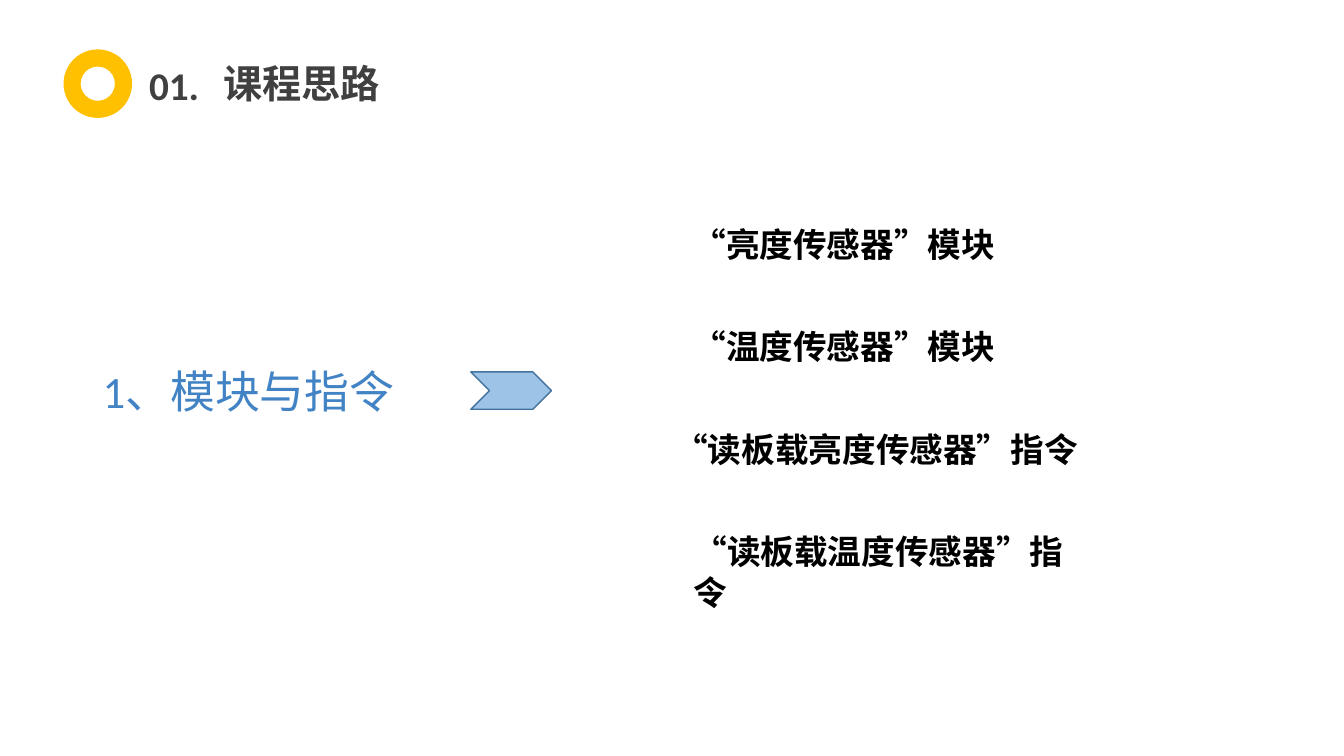
import pptx
import pptx.util
import pptx.dml.color
import pptx.enum.dml
import pptx.enum.lang
import pptx.enum.shapes
import pptx.enum.text

Inches = pptx.util.Inches
KIND = pptx.enum.shapes.MSO_SHAPE
ALIGN = pptx.enum.text.PP_ALIGN
FONT = {
    "name": "Calibri",
    "language_id": pptx.enum.lang.MSO_LANGUAGE_ID.SIMPLIFIED_CHINESE,
}
HEAD = {"size": pptx.util.Pt(28), "bold": True}
TOPIC = {"size": pptx.util.Pt(32), "bold": False}
ITEM = {"size": pptx.util.Pt(24), "bold": True}
ITEMS = [
    (0.18, 3.25, "“亮度传感器”模块"),
    (0.18, 3.25, "“温度传感器”模块"),
    (0, 4.26, "“读板载亮度传感器”指令"),
    (0.19, 3.88, "“读板载温度传感器”指令"),
]


def color(code):
    return pptx.dml.color.RGBColor.from_string(code)


def paint(fill, code):
    fill.solid()
    fill.fore_color.rgb = color(code)


def write(slide, box, text, style, code, align=ALIGN.LEFT):
    frame = slide.shapes.add_textbox(*map(Inches, box)).text_frame
    frame.word_wrap = True
    frame.auto_size = pptx.enum.text.MSO_AUTO_SIZE.SHAPE_TO_FIT_TEXT
    line = frame.paragraphs[0]
    line.alignment = align
    run = line.add_run()
    run.text = text
    for key, value in {**FONT, **style}.items():
        setattr(run.font, key, value)
    run.font.color.rgb = color(code)


def draw(slide, kind, box, fill, edge=None):
    shape = slide.shapes.add_shape(kind, *map(Inches, box))
    shape.shadow.inherit = False
    paint(shape.fill, fill)
    if edge:
        paint(shape.line.fill, edge)
        shape.line.width = pptx.util.Pt(1)
    else:
        shape.line.fill.background()


def header(slide, left, top, side):
    draw(slide, KIND.DONUT, (left, top, side, side), "FFC000")
    write(slide, (left + 0.75, top + 0.07, 0.75, 0.57), "01.", HEAD, "404040")
    write(slide, (left + 1.47, top + 0.05, 1.78, 0.57), "课程思路", HEAD, "404040", ALIGN.CENTER)


def topic(slide, left, top, width, height):
    write(slide, (left, top, width, height), "1、模块与指令", TOPIC, "4183C4")
    arrow = (left + width + 0.63, top + 0.13, 0.8, 0.37)
    draw(slide, KIND.CHEVRON, arrow, "9DC3E6", "43739E")


def details(slide, left, top, height):
    row = 0.5
    step = (height - row) / (len(ITEMS) - 1)
    for i, (shift, width, text) in enumerate(ITEMS):
        write(slide, (left + shift, top + i * step, width, row), text, ITEM, "000000")


def main():
    deck = pptx.Presentation()
    deck.slide_width = Inches(13.33)
    deck.slide_height = Inches(7.5)
    slide = deck.slides.add_slide(deck.slide_layouts[6])
    paint(slide.background.fill, "FFFFFF")
    header(slide, 0.63, 0.49, 0.68)
    topic(slide, 0.92, 3.56, 3.12, 0.64)
    details(slide, 6.59, 2.17, 3.55)
    deck.save("out.pptx")


if __name__ == "__main__":
    main()
